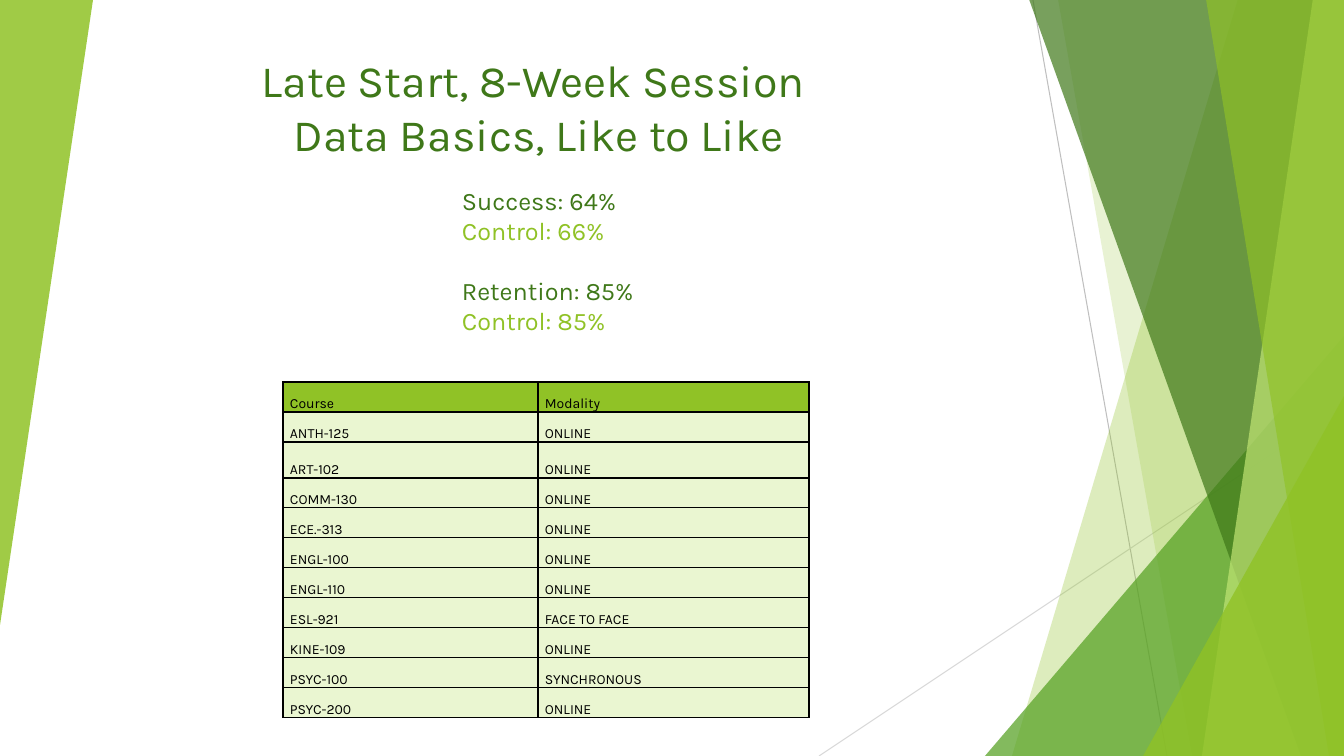
from lxml import etree
from pptx import Presentation
from pptx import util as u
from pptx.dml.color import RGBColor
from pptx.enum import shapes, text
from pptx.oxml.ns import qn

# Colours
DARK = RGBColor(0x3F, 0x78, 0x19)
GREEN = RGBColor(0x90, 0xC2, 0x26)
MID = RGBColor(0x54, 0xA0, 0x21)
LIME = RGBColor(0xC0, 0xE4, 0x74)
PALE = RGBColor(0xEA, 0xF6, 0xD1)
BLACK = RGBColor(0, 0, 0)
GREY = RGBColor(0xBF, 0xBF, 0xBF)
LIGHT_GREY = RGBColor(0xD9, 0xD9, 0xD9)

# Content
FONT = "Karla"
TITLE = [("Late Start, 8-Week Session ", DARK), ("Data Basics, Like to Like", DARK)]
RATES = [("Success: 64%", DARK), ("Control: 66%", GREEN),
         ("Retention: 85%", DARK), ("Control: 85%", GREEN)]
COURSES = [
    ("Course", "Modality"),
    ("ANTH-125", "ONLINE"),
    ("ART-102", "ONLINE"),
    ("COMM-130", "ONLINE"),
    ("ECE.-313", "ONLINE"),
    ("ENGL-100", "ONLINE"),
    ("ENGL-110", "ONLINE"),
    ("ESL-921", "FACE TO FACE"),
    ("KINE-109", "ONLINE"),
    ("PSYC-100", "SYNCHRONOUS"),
    ("PSYC-200", "ONLINE"),
]

# Layout in px
W, H = 1344, 756
COLUMNS = (255, 271)
ROW, TALL_ROW, TALL_INDEX = 30, 36, 2
RAYS = [((1033, 0), (1167, H), GREY), ((W, 406), (819, H), LIGHT_GREY)]
# Bands reach the right edge: (top left x, bottom left x), colour, opacity %
# Triangles: (left, top, width, height, rotation), colour, opacity %
FACETS = [
    ((1238, 1012), GREEN, 30),
    ((1058, 1192), GREEN, 20),
    ((985, 336, 359, 420, 0), MID, 72),
    ((1029, 1301), DARK, 70),
    ((1313, 1202), LIME, 70),
    ((1206, 1329), GREEN, 65),
    ((1143, 396, 201, 360, 0), GREEN, 80),
    ((0, 0, 93, 625, 180), GREEN, 85),
]


def px(n):
    return u.Emu(round(n * 914400 / 100.8))


def add_band(s, top_x, bottom_x):
    corners = [(px(x), px(y)) for x, y in ((top_x, -1), (W, -1), (W, H), (bottom_x, H))]
    builder = s.shapes.build_freeform(*corners[0])
    builder.add_line_segments(corners[1:], close=True)
    return builder.convert_to_shape()


def add_triangle(s, x, y, w, h, rotation):
    sp = s.shapes.add_shape(shapes.MSO_SHAPE.ISOSCELES_TRIANGLE, px(x), px(y), px(w), px(h))
    sp.adjustments[0] = 1
    sp.rotation = rotation
    return sp


def paint(sp, color, opacity):
    sp.shadow.inherit = False
    sp.line.fill.background()
    sp.fill.solid()
    sp.fill.fore_color.rgb = color
    clr = sp.fill._xPr.find(".//" + qn("a:srgbClr"))
    etree.SubElement(clr, qn("a:alpha")).set("val", str(opacity * 1000))


def style(p, size, color):
    for r in p.runs:
        r.font.name, r.font.size, r.font.color.rgb = FONT, u.Pt(size), color


def add_text(s, box, lines, size, align):
    tf = s.shapes.add_textbox(*map(px, box)).text_frame
    tf.word_wrap = True
    tf.text = "\n".join(line for line, _ in lines)
    for p, (_, color) in zip(tf.paragraphs, lines):
        p.alignment = align
        style(p, size, color)
    return tf


def add_borders(cell):
    tc_pr = cell._tc.get_or_add_tcPr()
    for i, side in enumerate(("a:lnL", "a:lnR", "a:lnT", "a:lnB")):
        ln = etree.Element(qn(side), w=str(u.Pt(1)))
        fill = etree.SubElement(ln, qn("a:solidFill"))
        etree.SubElement(fill, qn("a:srgbClr")).set("val", str(BLACK))
        tc_pr.insert(i, ln)


prs = Presentation()
prs.slide_width, prs.slide_height = px(W), px(H)
s = prs.slides.add_slide(prs.slide_layouts[6])

# Thin rays behind the facets
for start, end, color in RAYS:
    ray = s.shapes.add_connector(shapes.MSO_CONNECTOR.STRAIGHT, *map(px, start + end))
    ray.line.color.rgb = color
    ray.line.width = u.Pt(0.75)
    etree.SubElement(ray._element.spPr, qn("a:effectLst"))

# Translucent facets
for geometry, color, opacity in FACETS:
    add = add_band if len(geometry) == 2 else add_triangle
    paint(add(s, *geometry), color, opacity)

# Title and rates
add_text(s, (85, 48, 908, 119), TITLE, 32, text.PP_ALIGN.CENTER)
rates = add_text(s, (452, 180, 237, 194), RATES, 18, text.PP_ALIGN.LEFT)
rates.paragraphs[2].space_before = u.Pt(21.5)

# Course table
heights = [TALL_ROW if i == TALL_INDEX else ROW for i in range(len(COURSES))]
table = s.shapes.add_table(len(COURSES), len(COLUMNS), px(283), px(382),
                           px(sum(COLUMNS)), px(sum(heights))).table
for column, width in zip(table.columns, COLUMNS):
    column.width = px(width)
for i, (row, height) in enumerate(zip(table.rows, heights)):
    row.height = px(height)
    for cell, value in zip(row.cells, COURSES[i]):
        cell.text_frame.text = value
        style(cell.text_frame.paragraphs[0], 10, BLACK)
        cell.vertical_anchor = text.MSO_ANCHOR.BOTTOM
        cell.margin_left = cell.margin_right = px(7)
        cell.margin_top = cell.margin_bottom = 0
        cell.fill.solid()
        cell.fill.fore_color.rgb = PALE if i else GREEN
        add_borders(cell)

prs.save("out.pptx")
